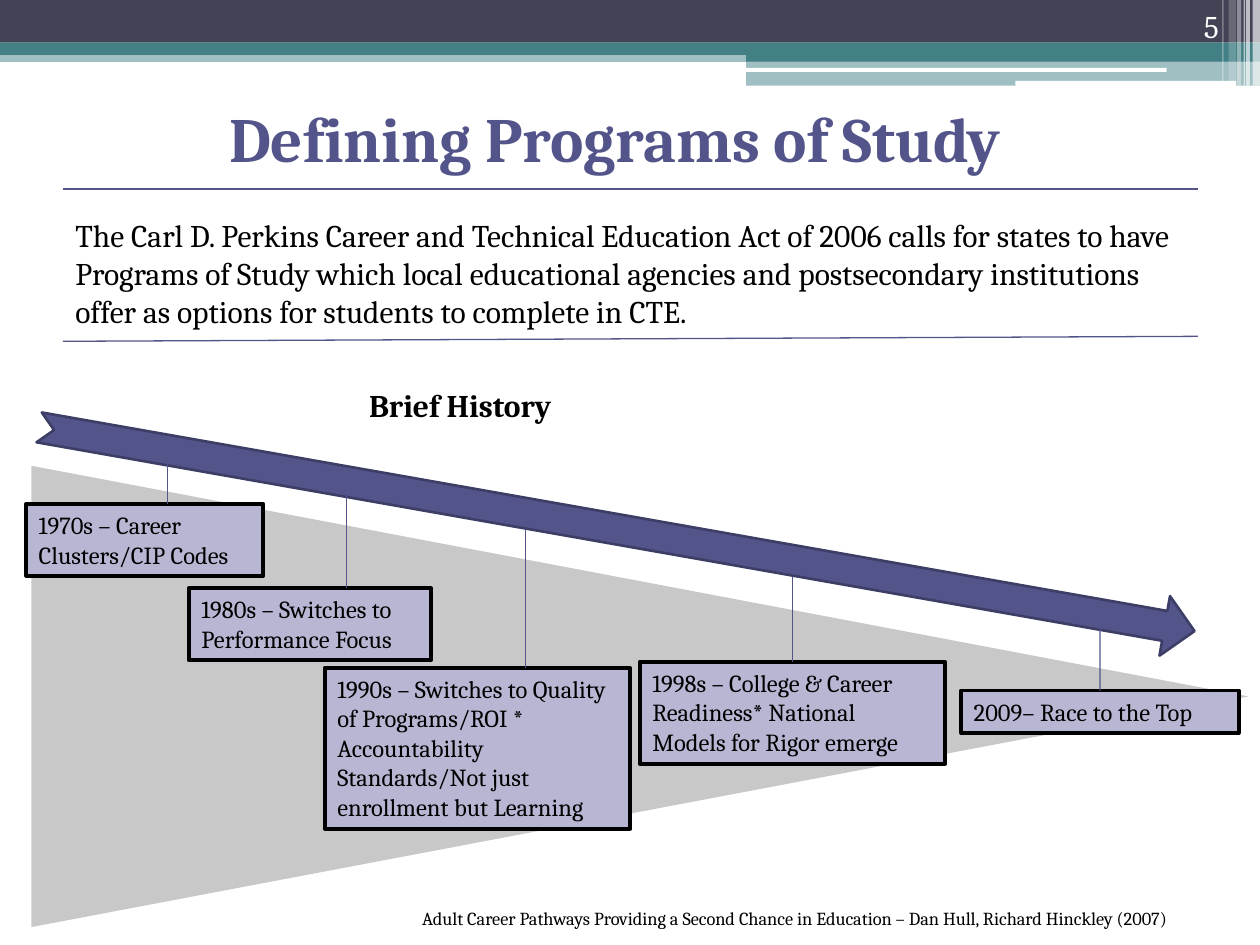
from dataclasses import dataclass

from lxml.etree import SubElement
from pptx import Presentation
from pptx.dml.color import RGBColor
from pptx.enum.shapes import MSO_CONNECTOR as Connector, MSO_SHAPE as Shape
from pptx.enum.text import MSO_ANCHOR as Anchor, PP_ALIGN as Align
from pptx.oxml.ns import qn
from pptx.util import Cm, Pt


@dataclass(frozen=True)
class Theme:
    font: str = "Cambria"
    navy: str = "424456"
    teal: str = "438086"
    indigo: str = "53548A"
    indigo_dark: str = "3D3E66"
    lavender: str = "B7B7D4"
    grey: str = "C8C8C8"
    white: str = "FFFFFF"
    black: str = "000000"
    title: float = 36
    body: float = 18
    card: float = 14
    source: float = 10.5


@dataclass(frozen=True)
class Box:
    left: float
    top: float
    width: float
    height: float

    def inner(self, left, top, width, height):
        return Box(self.left + left, self.top + top, width, height)

    def lengths(self):
        return [Cm(n) for n in (self.left, self.top, self.width, self.height)]


THEME = Theme()


def add_block(page, box, color, kind=Shape.RECTANGLE, alpha=None, edge=None, edge_width=0):
    block = page.shapes.add_shape(kind, *box.lengths())
    block.shadow.inherit = False
    block.fill.solid()
    block.fill.fore_color.rgb = RGBColor.from_string(color)
    if alpha is not None:
        color_node = block.fill._xPr.find(".//" + qn("a:srgbClr"))
        SubElement(color_node, qn("a:alpha"), val=str(alpha * 1000))
    if edge:
        block.line.color.rgb = RGBColor.from_string(edge)
        block.line.width = Pt(edge_width)
    else:
        block.line.fill.background()
    return block


def write(shape, text, size, color=THEME.black, bold=False, align=Align.LEFT, anchor=Anchor.TOP):
    frame = shape.text_frame
    frame.word_wrap = True
    frame.vertical_anchor = anchor
    para = frame.paragraphs[0]
    para.text = text
    para.alignment = align
    para.font.name = THEME.font
    para.font.size = Pt(size)
    para.font.bold = bold
    para.font.color.rgb = RGBColor.from_string(color)


def add_text(page, box, text, size, **style):
    write(page.shapes.add_textbox(*box.lengths()), text, size, **style)


def add_rule(page, *ends):
    rule = page.shapes.add_connector(Connector.STRAIGHT, *[Cm(n) for n in ends])
    rule.line.color.rgb = RGBColor.from_string(THEME.indigo)
    rule.line.width = Pt(0.75)
    SubElement(rule._element.spPr, qn("a:effectLst"))
    return rule


def draw_header(page, box, number):
    bands = [
        (0, 1.02, box.width, 0.23, THEME.teal, 50),
        (0, 0, box.width, 0.86, THEME.navy, None),
        (0, 0.86, box.width, 0.25, THEME.teal, None),
        (15.04, 0.99, 10.36, 0.25, THEME.teal, None),
        (15.04, 1.22, 10.36, 0.51, THEME.teal, 50),
    ]
    for *place, color, alpha in bands:
        add_block(page, box.inner(*place), color, alpha=alpha)
    for place in [(15.01, 1.37, 8.51, 0.08), (20.47, 1.63, 4.45, 0.1)]:
        add_block(page, box.inner(*place), THEME.white, Shape.ROUNDED_RECTANGLE)
    stripes = [
        (25.25, 0.15, 1.73, 65),
        (25.12, 0.08, 1.73, 65),
        (25.07, 0.03, 1.73, 60),
        (24.94, 0.08, 1.73, 40),
        (24.77, 0.15, 1.63, 20),
        (24.64, 0.03, 1.63, 30),
    ]
    for left, width, height, alpha in stripes:
        add_block(page, box.inner(left, 0, width, height), THEME.white, alpha=alpha)
    add_text(page, box.inner(22.71, 0, 2.11, 1.02), number, THEME.body,
             color=THEME.white, align=Align.RIGHT, anchor=Anchor.BOTTOM)


def draw_introduction(page, box, title, body):
    right = box.left + box.width
    add_text(page, box.inner(1.5, 0, 19.25, 2.57), title, THEME.title,
             color=THEME.indigo, bold=True, align=Align.CENTER)
    add_text(page, box.inner(0, 2.36, 23.29, 2.6), body, THEME.body)
    add_rule(page, box.left, box.top + 1.93, right, box.top + 1.93)
    add_rule(page, box.left, box.top + 5, right, box.top + 4.9)


def draw_wedge(page, box):
    shift = (box.width - box.height) / 2
    upright = box.inner(shift, -shift, box.height, box.width)
    add_block(page, upright, THEME.grey, Shape.FLOWCHART_EXTRACT).rotation = 90


def draw_timeline(page, box, heading, events):
    draw_wedge(page, box.inner(0.13, 1.89, 24.54, 9.3))
    cards = []
    for text, place, post, post_top in events:
        card_box = box.inner(*place)
        card = add_block(page, card_box, THEME.lavender, edge=THEME.black, edge_width=2.25)
        write(card, text, THEME.card)
        cards.append((card, card_box, post, post_top))
    arrow = add_block(page, box.inner(0.11, 2.56, 23.65, 1.22), THEME.indigo,
                      Shape.NOTCHED_RIGHT_ARROW, edge=THEME.indigo_dark, edge_width=1.5)
    arrow.rotation = 10
    for card, card_box, post, post_top in cards:
        offset = card_box.width / 2 if post is None else post
        x = card_box.left + offset
        rule = add_rule(page, x, box.top + post_top, x, card_box.top)
        if post is None:
            rule.end_connect(card, 0)
    add_text(page, box.inner(6.69, 0.15, 7.62, 1.02), heading, THEME.body, bold=True)


def draw_source(page, box, text):
    add_text(page, box, text, THEME.source)


def main():
    deck = Presentation()
    deck.slide_width, deck.slide_height = Cm(25.4), Cm(19.05)
    page = deck.slides.add_slide(deck.slide_layouts[6])
    draw_header(page, Box(0, 0, 25.4, 1.73), "5")
    draw_introduction(
        page, Box(1.27, 1.88, 22.88, 5), "Defining Programs of Study",
        "The Carl D. Perkins Career and Technical Education Act of 2006 calls for states to have "
        "Programs of Study which local educational agencies and postsecondary institutions "
        "offer as options for students to complete in CTE.")
    events = [
        ("1970s – Career Clusters/CIP Codes", (0.03, 2.66, 4.78, 1.45), 2.85, 1.82),
        ("1980s – Switches to Performance Focus", (3.31, 4.36, 4.88, 1.45), 3.18, 2.46),
        ("1990s – Switches to Quality of Programs/ROI * Accountability Standards/Not just "
         "enrollment but Learning", (6.05, 5.96, 6.15, 3.25), 4.04, 3.17),
        ("1998s – College & Career Readiness* National Models for Rigor emerge",
         (12.4, 5.84, 6.15, 2.06), None, 4.13),
        ("2009– Race to the Top", (18.88, 6.42, 5.59, 0.86), None, 5.15),
    ]
    draw_timeline(page, Box(0.5, 7.5, 24.67, 11.19), "Brief History", events)
    draw_source(page, Box(8.26, 18.16, 17.14, 0.71),
                "Adult Career Pathways Providing a Second Chance in Education – "
                "Dan Hull, Richard Hinckley (2007)")
    deck.save("out.pptx")


if __name__ == "__main__":
    main()
